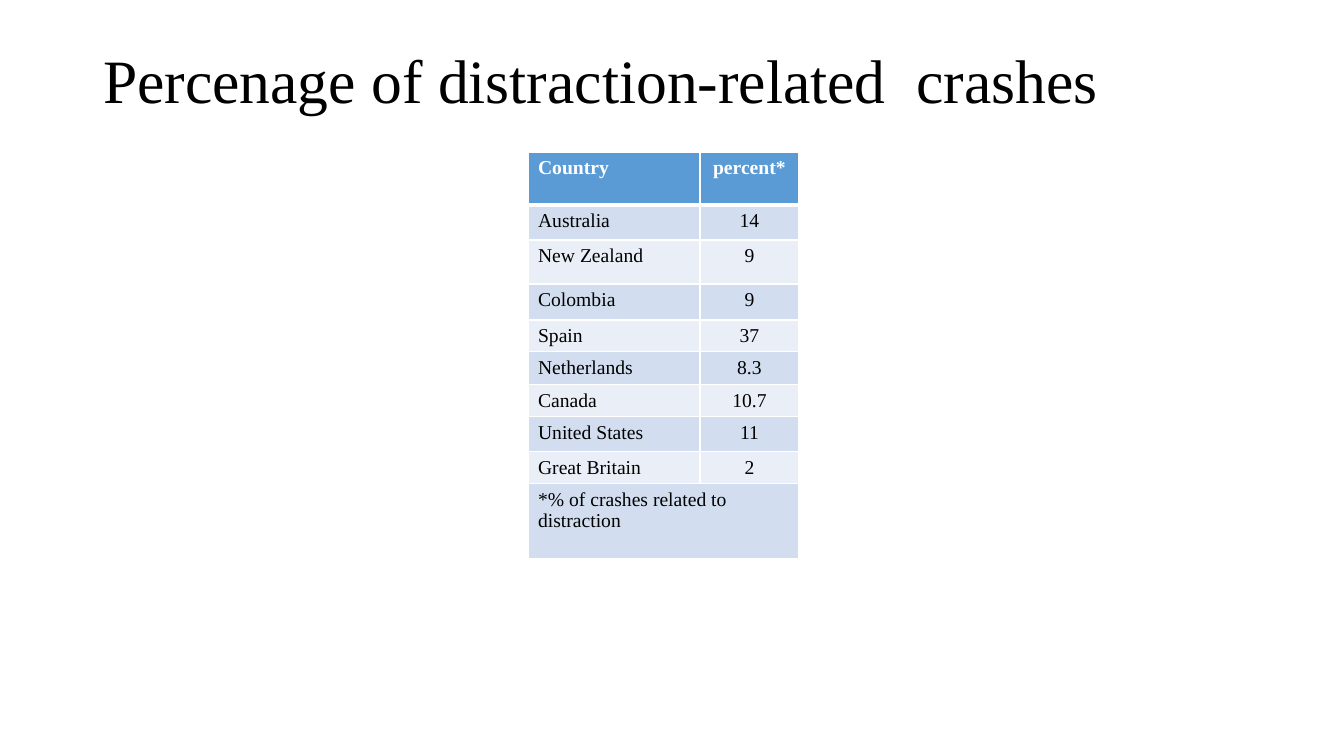
from lxml.etree import SubElement
from pptx import Presentation
from pptx.dml.color import RGBColor
from pptx.enum.text import MSO_ANCHOR, MSO_AUTO_SIZE, PP_ALIGN
from pptx.oxml.ns import qn
from pptx.util import Pt

PX = 9071
FONT = "Times New Roman"
COLOURS = {
    "ink": "000000",
    "white": "FFFFFF",
    "header": "5B9BD5",
    "odd": "D2DEEF",
    "even": "EAEFF7",
}
COLUMN_WIDTHS = [172, 99]
ROW_HEIGHTS = [53, 35, 44, 36, 31, 33, 32, 35, 32, 75]
ROWS = [
    ("Country", "percent*"),
    ("Australia", "14"),
    ("New Zealand", "9"),
    ("Colombia", "9"),
    ("Spain", "37"),
    ("Netherlands", "8.3"),
    ("Canada", "10.7"),
    ("United States", "11"),
    ("Great Britain", "2"),
    ("*% of crashes related to distraction", ""),
]


def px(count):
    return count * PX


def colour(name):
    return RGBColor.from_string(COLOURS[name])


def write(frame, text, size=14, ink="ink", bold=False, align=PP_ALIGN.LEFT, spacing=None):
    para = frame.paragraphs[0]
    para.alignment = align
    para.line_spacing = spacing
    span = para.add_run()
    span.text = text
    span.font.name = FONT
    span.font.size = Pt(size)
    span.font.bold = bold
    span.font.color.rgb = colour(ink)


def add_border(cell, side, points):
    properties = cell._tc.get_or_add_tcPr()
    line = SubElement(properties, qn(f"a:ln{side}"), w=str(Pt(points)))
    fill = SubElement(line, qn("a:solidFill"))
    SubElement(fill, qn("a:srgbClr"), val=COLOURS["white"])


def format_cell(cell, fill, bottom=1):
    for side, points in (("L", 1), ("R", 1), ("T", 1), ("B", bottom)):
        add_border(cell, side, points)
    cell.fill.solid()
    cell.fill.fore_color.rgb = colour(fill)


def add_title(page, text):
    box = page.shapes.title
    box.left, box.top, box.width, box.height = px(93), px(40), px(1159), px(146)
    frame = box.text_frame
    frame.word_wrap = True
    frame.auto_size = MSO_AUTO_SIZE.NONE
    frame.vertical_anchor = MSO_ANCHOR.TOP
    frame.margin_top = px(10)
    write(frame, text, size=44, spacing=0.9)


def add_crash_table(page):
    table = page.shapes.add_table(
        len(ROWS), len(COLUMN_WIDTHS), px(528), px(152),
        px(sum(COLUMN_WIDTHS)), px(sum(ROW_HEIGHTS)),
    ).table
    for column, width in zip(table.columns, COLUMN_WIDTHS):
        column.width = px(width)
    for row, height in zip(table.rows, ROW_HEIGHTS):
        row.height = px(height)
    last = len(ROWS) - 1
    table.cell(last, 0).merge(table.cell(last, 1))
    for index, texts in enumerate(ROWS):
        header = index == 0
        fill = "header" if header else "odd" if index % 2 else "even"
        for column, text in enumerate(texts):
            cell = table.cell(index, column)
            format_cell(cell, fill, bottom=3 if header else 1)
            if text:
                write(
                    cell.text_frame, text, bold=header,
                    ink="white" if header else "ink",
                    align=PP_ALIGN.CENTER if column else PP_ALIGN.LEFT,
                )


def main():
    deck = Presentation()
    deck.slide_width, deck.slide_height = px(1344), px(756)
    page = deck.slides.add_slide(deck.slide_layouts[5])
    add_title(page, "Percenage of distraction-related  crashes")
    add_crash_table(page)
    deck.save("out.pptx")


if __name__ == "__main__":
    main()
